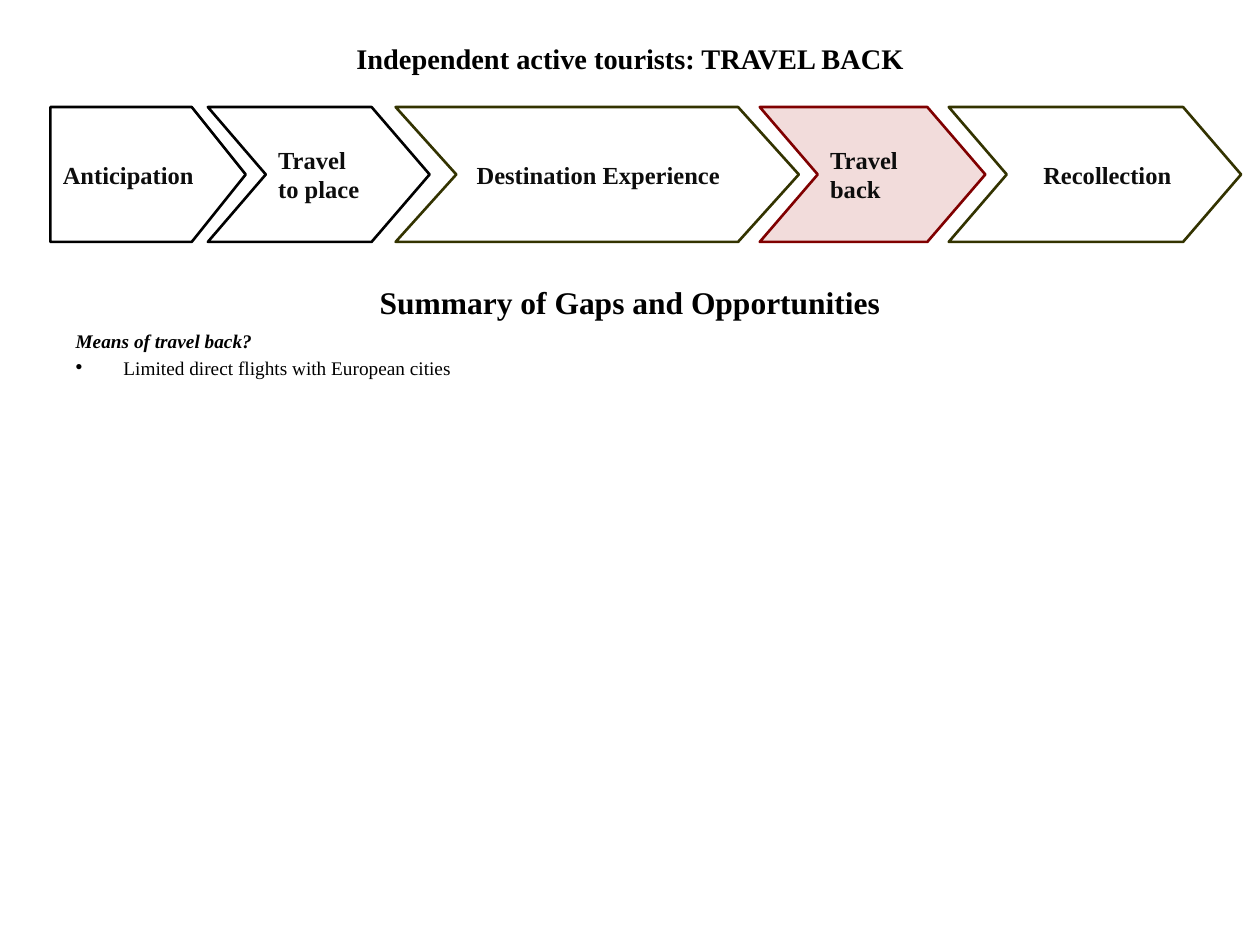
from dataclasses import dataclass
from lxml.etree import SubElement
from pptx import Presentation
from pptx.dml.color import RGBColor
from pptx.enum.shapes import MSO_SHAPE
from pptx.enum.text import MSO_ANCHOR, MSO_AUTO_SIZE, PP_ALIGN
from pptx.oxml.ns import qn
from pptx.util import Inches, Pt


@dataclass(frozen=True)
class Theme:
    font: str = "Times New Roman"
    black: str = "000000"
    ink: str = "0D0D0D"
    olive: str = "333300"
    red: str = "800000"
    pink: str = "F2DCDB"
    white: str = "FFFFFF"
    title: float = 16.2
    head: float = 18
    label: float = 14
    body: float = 11
    line: float = 1.5


class Deck:
    def __init__(self, theme):
        self.theme = theme
        self.file = Presentation()
        self.file.slide_width, self.file.slide_height = Inches(10), Inches(7.5)
        # Comparison layout: a title, with a heading above a list
        self.slide = self.file.slides.add_slide(self.file.slide_layouts[4])

    def run(self, para, text, size, color, bold=True, italic=False):
        run = para.add_run()
        run.text = text
        font = run.font
        font.name, font.size = self.theme.font, Pt(size)
        font.bold, font.italic = bold, italic
        font.color.rgb = RGBColor.from_string(color)

    def holder(self, idx, box, anchor):
        holder = next(h for h in self.slide.placeholders
                      if h.placeholder_format.idx == idx)
        holder.left, holder.top, holder.width, holder.height = map(Inches, box)
        frame = holder.text_frame
        frame.auto_size = MSO_AUTO_SIZE.NONE
        frame.word_wrap = True
        frame.vertical_anchor = anchor
        return frame

    def heading(self, idx, box, text, size, anchor, gap=0):
        para = self.holder(idx, box, anchor).paragraphs[0]
        para.alignment = PP_ALIGN.CENTER
        para.space_before = Pt(gap)
        self.run(para, text, size, self.theme.black)

    def points(self, idx, box, lead, items):
        frame = self.holder(idx, box, MSO_ANCHOR.TOP)
        size, color = self.theme.body, self.theme.black
        for text in (lead, *items):
            first = text == lead
            para = frame.paragraphs[0] if first else frame.add_paragraph()
            para.space_before = Pt(size * 0.2)
            props = para._p.get_or_add_pPr()
            indent = 0 if first else Inches(0.38)
            props.set("marL", str(indent))
            props.set("indent", str(-indent))
            if first:
                SubElement(props, qn("a:buNone"))
            else:
                SubElement(props, qn("a:buChar")).set("char", "•")
            self.run(para, text, size, color, bold=first, italic=first)

    def arrow(self, kind, left, width, adj, text, line, fill=None,
              align=PP_ALIGN.LEFT, inset=0.1):
        shape = self.slide.shapes.add_shape(
            kind, Inches(left), Inches(0.85), Inches(width), Inches(1.07))
        shape.adjustments[0] = adj
        shape.shadow.inherit = False
        if fill:
            shape.fill.solid()
            shape.fill.fore_color.rgb = RGBColor.from_string(fill)
        else:
            shape.fill.background()
        shape.line.color.rgb = RGBColor.from_string(line)
        shape.line.width = Pt(self.theme.line)
        frame = shape.text_frame
        frame.word_wrap = True
        frame.vertical_anchor = MSO_ANCHOR.MIDDLE
        frame.margin_left, frame.margin_right = Inches(inset), Inches(0.08)
        para = frame.paragraphs[0]
        para.alignment = align
        self.run(para, text, self.theme.label, self.theme.ink)

    def save(self):
        for holder in list(self.slide.placeholders):
            if not holder.text_frame.text:
                holder.element.getparent().remove(holder.element)
        self.file.save("out.pptx")


def main():
    look = Theme()
    deck = Deck(look)

    # Title, section heading and list
    deck.heading(0, (0.5, 0.3, 9, 0.33), "Independent active tourists: TRAVEL BACK",
                 look.title, MSO_ANCHOR.MIDDLE)
    deck.heading(1, (0.5, 2.1, 9, 0.5), "Summary of Gaps and Opportunities",
                 look.head, MSO_ANCHOR.BOTTOM, gap=look.head * 0.2)
    deck.points(2, (0.5, 2.56, 9, 4.76), "Means of travel back?",
                ["Limited direct flights with European cities"])

    # Journey stages, with the current one in red
    chevron = MSO_SHAPE.CHEVRON
    deck.arrow(MSO_SHAPE.PENTAGON, 0.4, 1.55, 0.4, "Anticipation", look.black)
    deck.arrow(chevron, 1.65, 1.76, 0.43, "Travel to place", look.black)
    deck.arrow(chevron, 3.14, 3.2, 0.45, "Destination Experience", look.olive,
               look.white, align=PP_ALIGN.CENTER)
    deck.arrow(chevron, 6.03, 1.79, 0.43, "Travel back", look.red, look.pink)
    deck.arrow(chevron, 7.53, 2.32, 0.43, "Recollection", look.olive,
               look.white, inset=0.29)

    deck.save()


if __name__ == "__main__":
    main()
